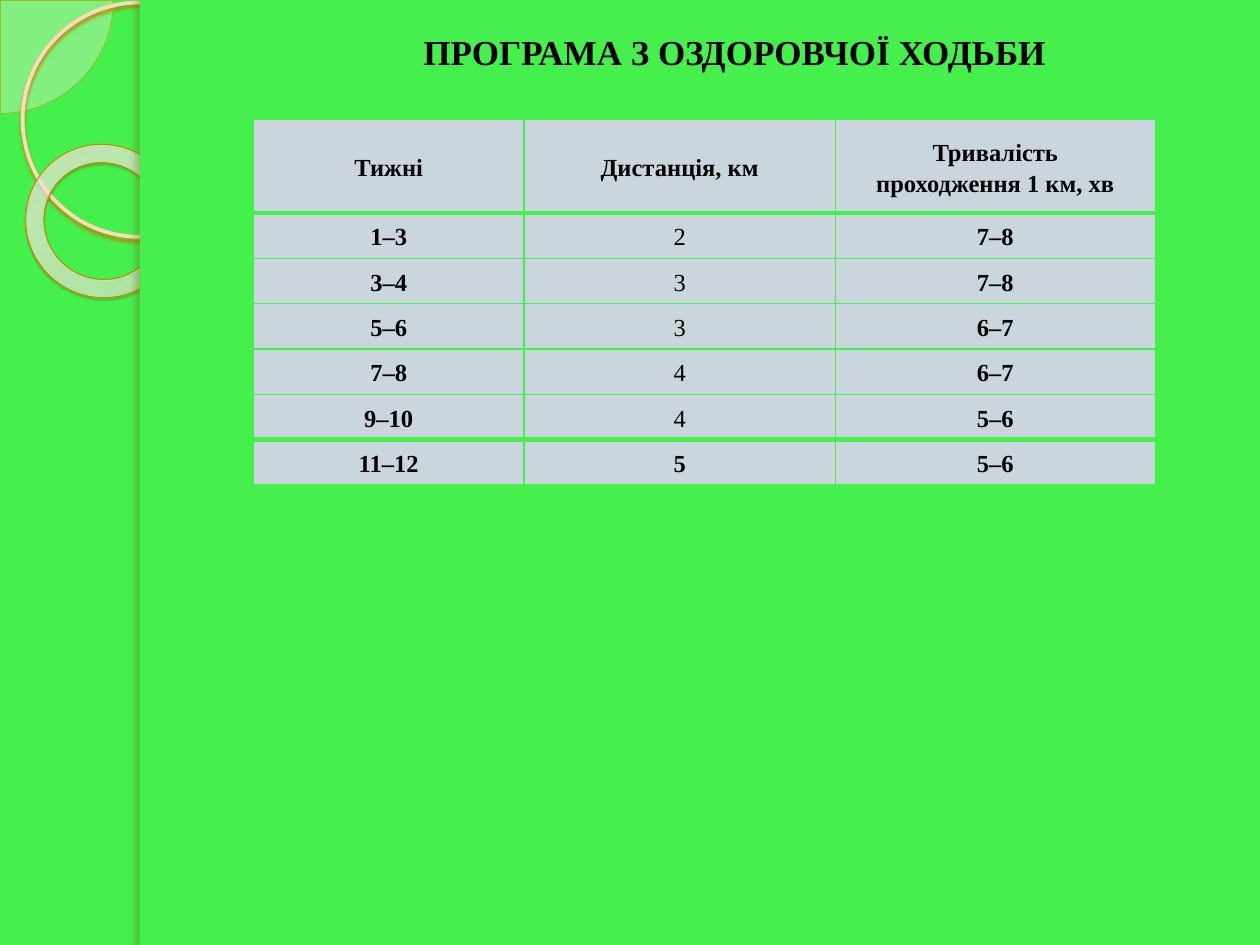
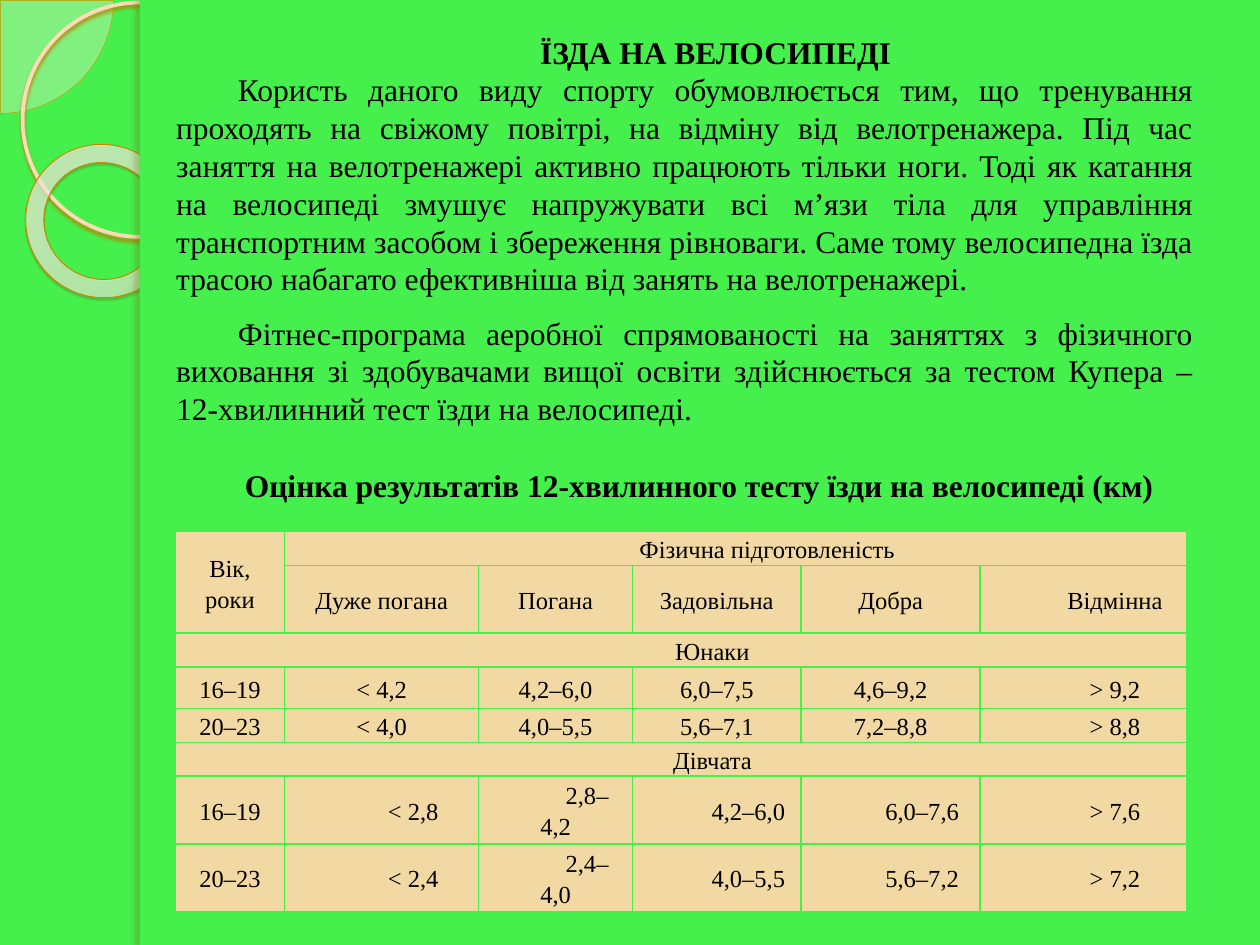
from pptx import Presentation
from pptx.dml.color import RGBColor
from pptx.enum.shapes import MSO_SHAPE
from pptx.enum.text import MSO_ANCHOR, MSO_AUTO_SIZE, PP_ALIGN
from pptx.oxml import parse_xml
from pptx.oxml.ns import nsdecls, qn
from pptx.util import Inches, Pt

# Content
WALK_TITLE = "ПРОГРАМА З ОЗДОРОВЧОЇ ХОДЬБИ"
WALK = [
    ("Тижні", "Дистанція, км", "Тривалість\nпроходження 1 км, хв"),
    ("1–3", "2", "7–8"),
    ("3–4", "3", "7–8"),
    ("5–6", "3", "6–7"),
    ("7–8", "4", "6–7"),
    ("9–10", "4", "5–6"),
    ("11–12", "5", "5–6"),
]
BIKE_TITLE = "ЇЗДА НА ВЕЛОСИПЕДІ"
BIKE_TEXT = (
    "Користь даного виду спорту обумовлюється тим, що тренування проходять "
    "на свіжому повітрі, на відміну від велотренажера. Під час заняття на "
    "велотренажері активно працюють тільки ноги. Тоді як катання на велосипеді "
    "змушує напружувати всі м’язи тіла для управління транспортним засобом і "
    "збереження рівноваги. Саме тому велосипедна їзда трасою набагато "
    "ефективніша від занять на велотренажері."
)
TEST_TEXT = (
    "Фітнес-програма аеробної спрямованості на заняттях з фізичного виховання "
    "зі здобувачами вищої освіти здійснюється за тестом Купера – "
    "12-хвилинний тест їзди на велосипеді."
)
TEST_TITLE = "Оцінка результатів 12-хвилинного тесту їзди на велосипеді (км)"
TEST = [
    ("Вік, роки", "Фізична підготовленість"),
    ("", "Дуже погана", "Погана", "Задовільна", "Добра", "Відмінна"),
    ("Юнаки",),
    ("16–19", "< 4,2", "4,2–6,0", "6,0–7,5", "4,6–9,2", "> 9,2"),
    ("20–23", "< 4,0", "4,0–5,5", "5,6–7,1", "7,2–8,8", "> 8,8"),
    ("Дівчата",),
    ("16–19", "< 2,8", "2,8–4,2", "4,2–6,0", "6,0–7,6", "> 7,6"),
    ("20–23", "< 2,4", "2,4–4,0", "4,0–5,5", "5,6–7,2", "> 7,2"),
]
SPANS = [((0, 0), (1, 0)), ((0, 1), (0, 5)), ((2, 0), (2, 5)), ((5, 0), (5, 5))]
GIRLS = 5  # row that opens the second group

# Shared style
FONT = "Times New Roman"
HEX = {
    "green": "45F04D", "black": "000000", "steel": "CBD5DE", "sand": "F2D9A4",
    "cream": "FFF1E4", "gold": "D79000", "peach": "FFDAB6", "amber": "BA7D00",
    "ochre": "C98700", "brown": "5C3E00", "umber": "72500B",
    "pale": "FFF6EE", "milk": "FFFAF6", "honey": "DD9500",
}


def rgb(name):
    return RGBColor.from_string(HEX[name])


def tint(name, alpha):
    return f'<a:srgbClr val="{HEX[name]}"><a:alpha val="{alpha * 1000}"/></a:srgbClr>'


def draw(slide, kind, box, fill=None, line=None, shade=None):
    """Add a preset shape; line is (colour, width), shade is a cast shadow."""
    shape = slide.shapes.add_shape(kind, *map(Inches, box))
    shape.shadow.inherit = False
    if fill:
        shape.fill.solid()
        shape.fill.fore_color.rgb = rgb(fill)
    else:
        shape.fill.background()
    if line:
        shape.line.color.rgb = rgb(line[0])
        shape.line.width = Pt(line[1])
    else:
        shape.line.fill.background()
    if shade:
        name, alpha, blur, dist, angle = shade
        shape._element.spPr.find(qn("a:effectLst")).append(parse_xml(
            f'<a:outerShdw {nsdecls("a")} blurRad="{Pt(blur)}" dist="{Pt(dist)}" '
            f'dir="{angle * 60000}" algn="ctr" rotWithShape="0">'
            f'{tint(name, alpha)}</a:outerShdw>'))
    return shape


def add_base(deck):
    """Start a slide with the green ground and the ringed side band."""
    slide = deck.slides.add_slide(deck.slide_layouts[6])
    slide.background.fill.solid()
    slide.background.fill.fore_color.rgb = rgb("green")

    # Quarter disc in the corner
    pie = draw(slide, MSO_SHAPE.PIE, (-0.89, -0.89, 1.79, 1.79), "cream", ("gold", 0.25))
    pie.adjustments[0] = 0
    pie.adjustments[1] = 54
    color = pie._element.spPr.find(qn("a:solidFill"))[0]
    color.append(parse_xml(f'<a:alpha {nsdecls("a")} val="33000"/>'))

    # Rings
    draw(slide, MSO_SHAPE.OVAL, (0.18, 0.02, 1.86, 1.86), None,
         ("peach", 2.15), ("amber", 85, 2, 2, 90))
    ring = draw(slide, MSO_SHAPE.DONUT, (0.2, 1.15, 1.23, 1.21), None,
                ("ochre", 0.58), ("brown", 35, 1, 1.2, 75))
    ring.rotation = 38.6
    ring.adjustments[0] = 0.12
    stops = "".join(
        f'<a:gs pos="{pos * 1000}">{tint(name, alpha)}</a:gs>'
        for pos, name, alpha in [(0, "pale", 70), (70, "milk", 55), (100, "honey", 60)])
    props = ring._element.spPr
    props.replace(props.find(qn("a:noFill")), parse_xml(
        f'<a:gradFill {nsdecls("a")} rotWithShape="1"><a:gsLst>{stops}</a:gsLst>'
        '<a:path path="circle"><a:fillToRect l="-408000" t="-50000" r="508000" '
        'b="150000"/></a:path></a:gradFill>'))

    # Main panel and its shaded edge
    draw(slide, MSO_SHAPE.RECTANGLE, (1.11, 0, 8.89, 7.5), "green")
    draw(slide, MSO_SHAPE.RECTANGLE, (1.11, 0, 0.08, 7.5), "green",
         shade=("umber", 25, 3, 3, 180))
    return slide


def style(para, size, bold=False, align=PP_ALIGN.CENTER, indent=0):
    para.alignment = align
    font = para.font
    font.name, font.size, font.bold = FONT, Pt(size), bold
    font.color.rgb = rgb("black")
    if indent:
        props = para._p.get_or_add_pPr()
        props.set("marL", "0")
        props.set("indent", str(Inches(indent)))


def add_text(slide, box, lines, size=18, indent=0.49):
    """Lines are (text, is heading): headings are bold and centred."""
    frame = slide.shapes.add_textbox(*map(Inches, box)).text_frame
    frame.word_wrap = True
    frame.auto_size = MSO_AUTO_SIZE.SHAPE_TO_FIT_TEXT
    frame.text = "\n".join(text for text, _ in lines)
    for para, (_, head) in zip(frame.paragraphs, lines):
        align = PP_ALIGN.CENTER if head else PP_ALIGN.JUSTIFY
        style(para, size, head, align, indent)


def add_grid(slide, box, cols, rows, data, fill, bold, indent, thick=(), spans=()):
    """Bold and indent are rules on (row, column); thick lists heavy rules."""
    frame = slide.shapes.add_table(len(rows), len(cols), *map(Inches, box))
    table = frame.table
    table.first_row = table.horz_banding = False
    for col, width in zip(table.columns, cols):
        col.width = Inches(width)
    for row, height in zip(table.rows, rows):
        row.height = Inches(height)
    frame.height = Inches(box[3])
    for first, last in spans:
        table.cell(*first).merge(table.cell(*last))
    for r in range(len(rows)):
        for c in range(len(cols)):
            cell = table.cell(r, c)
            cell.text = data[r][c] if c < len(data[r]) else ""
            cell.vertical_anchor = MSO_ANCHOR.MIDDLE
            cell.margin_left = cell.margin_right = Inches(0.07)
            cell.margin_top = cell.margin_bottom = 0
            for para in cell.text_frame.paragraphs:
                style(para, 14, bold(r, c), indent=indent(r, c))
                para.line_spacing = 1.15
            widths = {"L": 1, "R": 1, "T": 3 if r in thick else 1,
                      "B": 3 if r + 1 in thick else 1}
            for side, width in widths.items():
                cell._tc.get_or_add_tcPr().append(parse_xml(
                    f'<a:ln{side} {nsdecls("a")} w="{Pt(width)}"><a:solidFill>'
                    f'<a:srgbClr val="{HEX["green"]}"/></a:solidFill></a:ln{side}>'))
            cell.fill.solid()
            cell.fill.fore_color.rgb = rgb(fill)


def add_walk(deck):
    slide = add_base(deck)
    last = len(WALK) - 1
    add_grid(slide, (2.01, 0.95, 7.17, 2.88), (2.15, 2.47, 2.54),
             [0.74] + [0.36] * last, WALK, "steel",
             bold=lambda r, c: c != 1 or r in (0, last),
             indent=lambda r, c: 0, thick=(1, last))
    add_text(slide, (1.57, 0.19, 8.03, 0.44), [(WALK_TITLE, True)], 20)


def add_bike(deck):
    slide = add_base(deck)
    add_text(slide, (1.3, 0.21, 8.27, 2.22), [(BIKE_TITLE, True), (BIKE_TEXT, False)])
    add_text(slide, (1.3, 2.44, 8.27, 1.01), [(TEST_TEXT, False)])
    wide = [first for first, last in SPANS if last[1] > first[1]]
    add_grid(slide, (1.39, 4.22, 8.02, 2.52), (0.87, 1.54, 1.22, 1.34, 1.42, 1.64),
             (0.17, 0.33, 0.25, 0.33, 0.25, 0.25, 0.45, 0.33), TEST, "sand",
             bold=lambda r, c: False,
             indent=lambda r, c: 0.5 * ((r, c) in wide or c == 5 or (r > GIRLS and c > 0)),
             spans=SPANS)
    add_text(slide, (1.3, 3.65, 8.5, 0.4), [(TEST_TITLE, True)], indent=0)


def main():
    deck = Presentation()
    deck.slide_width, deck.slide_height = Inches(10), Inches(7.5)
    add_walk(deck)
    add_bike(deck)
    deck.save("out.pptx")


if __name__ == "__main__":
    main()
